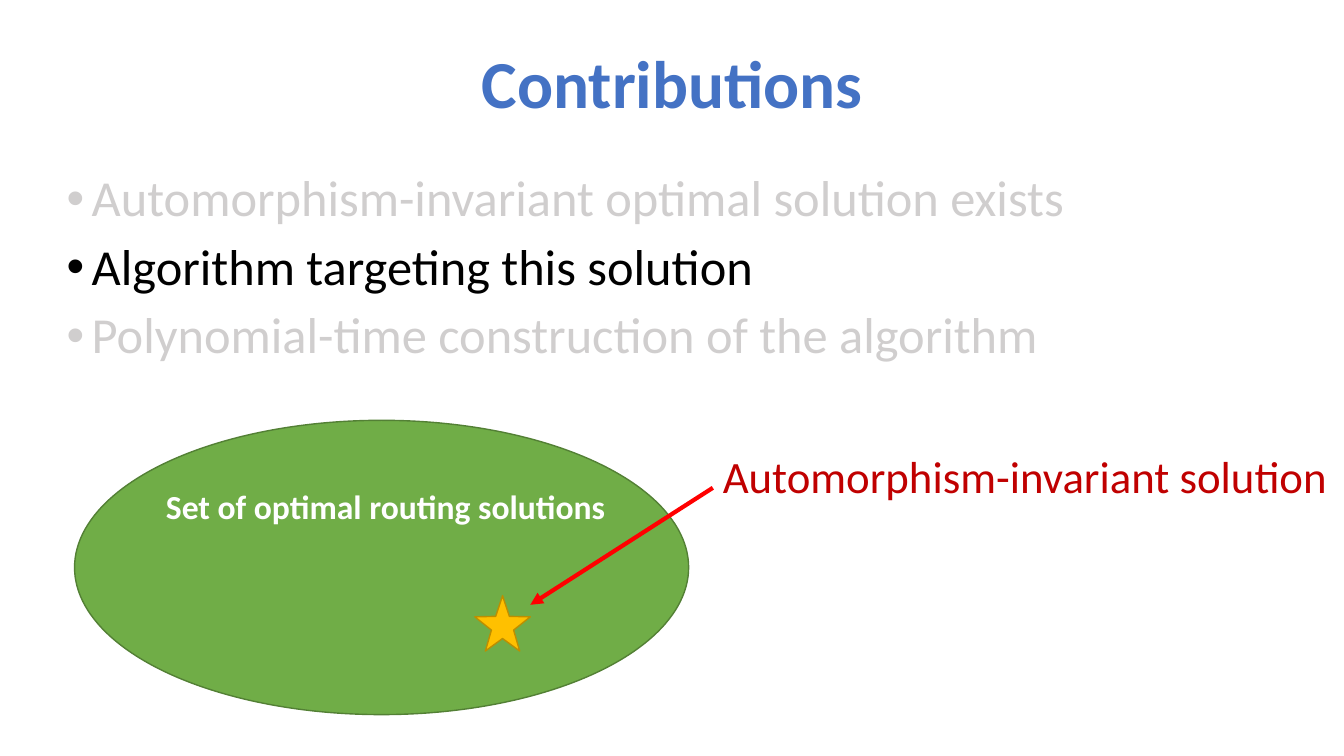
from dataclasses import dataclass

import pptx
import pptx.dml.color
import pptx.enum.dml
import pptx.enum.shapes
import pptx.enum.text
import pptx.oxml
import pptx.oxml.ns
import pptx.util

Align = pptx.enum.text.PP_ALIGN
Anchor = pptx.enum.text.MSO_ANCHOR
Preset = pptx.enum.shapes.MSO_SHAPE

WIDTH = pptx.util.Inches(13.33)
HEIGHT = pptx.util.Inches(7.5)
FONT = "Calibri"
COLORS = {
    "title": "4472C4",
    "muted": "D0CECE",
    "active": "000000",
    "set": "70AD47",
    "set edge": "538035",
    "star": "FFC000",
    "star edge": "BD8E00",
    "label": "C00000",
    "arrow": "FF0000",
    "white": "FFFFFF",
}


@dataclass(frozen=True)
class Box:
    """A rectangle in percent of the slide's width and height."""
    left: float
    top: float
    width: float
    height: float

    def emu(self) -> tuple[int, int, int, int]:
        return (across(self.left), down(self.top),
                across(self.width), down(self.height))


@dataclass(frozen=True)
class Figure:
    preset: Preset
    box: Box
    color: str


@dataclass(frozen=True)
class Note:
    text: str
    box: Box
    size: int
    color: str
    bold: bool
    wrap: bool
    align: Align


@dataclass(frozen=True)
class Contribution:
    text: str
    color: str


TITLE_BOX = Box(4.2, 2, 91.68, 18.93)
LIST_BOX = Box(4.2, 22.27, 91.68, 27.73)
ARROW_START, ARROW_END = (53.04, 64.53), (39.46, 80)

CONTRIBUTIONS = [
    Contribution("Automorphism-invariant optimal solution exists", "muted"),
    Contribution("Algorithm targeting this solution", "active"),
    Contribution("Polynomial-time construction of the algorithm", "muted"),
]
SOLUTION_SET = Figure(Preset.OVAL, Box(5.55, 55.6, 45.69, 38.93), "set")
INVARIANT_SOLUTION = Figure(Preset.STAR_5_POINT, Box(35.33, 78.8, 4.13, 7.33), "star")
NOTES = [
    Note("Automorphism-invariant solution", Box(53.04, 58.67, 47.04, 8.53),
         32, "label", False, False, Align.LEFT),
    Note("Set of optimal routing solutions", Box(9.15, 63.6, 39.08, 6.67),
         24, "white", True, True, Align.CENTER),
]


def across(percent: float) -> int:
    return round(WIDTH * percent / 100)


def down(percent: float) -> int:
    return round(HEIGHT * percent / 100)


def rgb(name: str) -> pptx.dml.color.RGBColor:
    return pptx.dml.color.RGBColor.from_string(COLORS[name])


def place(shape, box: Box) -> None:
    shape.left, shape.top, shape.width, shape.height = box.emu()


def write(paragraph, text: str, size: int, color: str, bold: bool = False) -> None:
    run = paragraph.add_run()
    run.text = text
    run.font.name = FONT
    run.font.size = pptx.util.Pt(size)
    run.font.bold = bold
    run.font.color.rgb = rgb(color)


def add_bullet(paragraph) -> None:
    properties = paragraph._p.get_or_add_pPr()
    indent = pptx.util.Inches(0.25)
    properties.set("marL", str(indent))
    properties.set("indent", str(-indent))
    for tag, key, value in (("a:buFont", "typeface", "Arial"), ("a:buChar", "char", "•")):
        bullet = pptx.oxml.ns.qn(tag)
        properties.append(properties.makeelement(bullet, {key: value}))


def fill_title(title) -> None:
    place(title, TITLE_BOX)
    frame = title.text_frame
    frame.vertical_anchor = Anchor.MIDDLE
    frame.auto_size = pptx.enum.text.MSO_AUTO_SIZE.NONE
    heading = frame.paragraphs[0]
    heading.alignment = Align.CENTER
    heading.line_spacing = 0.9
    write(heading, "Contributions", 48, "title", True)


def fill_contributions(body) -> None:
    place(body, LIST_BOX)
    frame = body.text_frame
    frame.auto_size = pptx.enum.text.MSO_AUTO_SIZE.NONE
    for index, contribution in enumerate(CONTRIBUTIONS):
        paragraph = frame.add_paragraph() if index else frame.paragraphs[0]
        add_bullet(paragraph)
        paragraph.line_spacing = 0.9
        paragraph.space_before = pptx.util.Pt(10 if index else 0)
        write(paragraph, contribution.text, 36, contribution.color)


def add_figure(slide, figure: Figure):
    shape = slide.shapes.add_shape(figure.preset, *figure.box.emu())
    shape.shadow.inherit = False
    shape.fill.solid()
    shape.fill.fore_color.rgb = rgb(figure.color)
    shape.line.color.rgb = rgb(f"{figure.color} edge")
    shape.line.width = pptx.util.Pt(1)
    return shape


def add_note(slide, note: Note) -> None:
    frame = slide.shapes.add_textbox(*note.box.emu()).text_frame
    frame.word_wrap = note.wrap
    frame.auto_size = pptx.enum.text.MSO_AUTO_SIZE.SHAPE_TO_FIT_TEXT
    frame.paragraphs[0].alignment = note.align
    write(frame.paragraphs[0], note.text, note.size, note.color, note.bold)


def add_arrow(slide, start: tuple[float, float], end: tuple[float, float]) -> None:
    arrow = slide.shapes.add_connector(
        pptx.enum.shapes.MSO_CONNECTOR.STRAIGHT,
        across(start[0]), down(start[1]), across(end[0]), down(end[1]))
    arrow.line.color.rgb = rgb("arrow")
    arrow.line.width = pptx.util.Pt(3)
    head = pptx.oxml.ns.qn("a:tailEnd")
    outline = arrow.line._get_or_add_ln()
    outline.append(outline.makeelement(head, {"type": "triangle"}))
    properties = arrow._element.spPr
    properties.append(properties.makeelement(pptx.oxml.ns.qn("a:effectLst"), {}))


def main() -> None:
    deck = pptx.Presentation()
    deck.slide_width, deck.slide_height = WIDTH, HEIGHT
    slide = deck.slides.add_slide(deck.slide_layouts[1])
    fill_title(slide.shapes.title)
    fill_contributions(slide.placeholders[1])
    add_figure(slide, SOLUTION_SET)
    star = add_figure(slide, INVARIANT_SOLUTION)
    star.adjustments[0] = 0.2
    for note in NOTES:
        add_note(slide, note)
    add_arrow(slide, ARROW_START, ARROW_END)
    deck.save("out.pptx")


if __name__ == "__main__":
    main()
